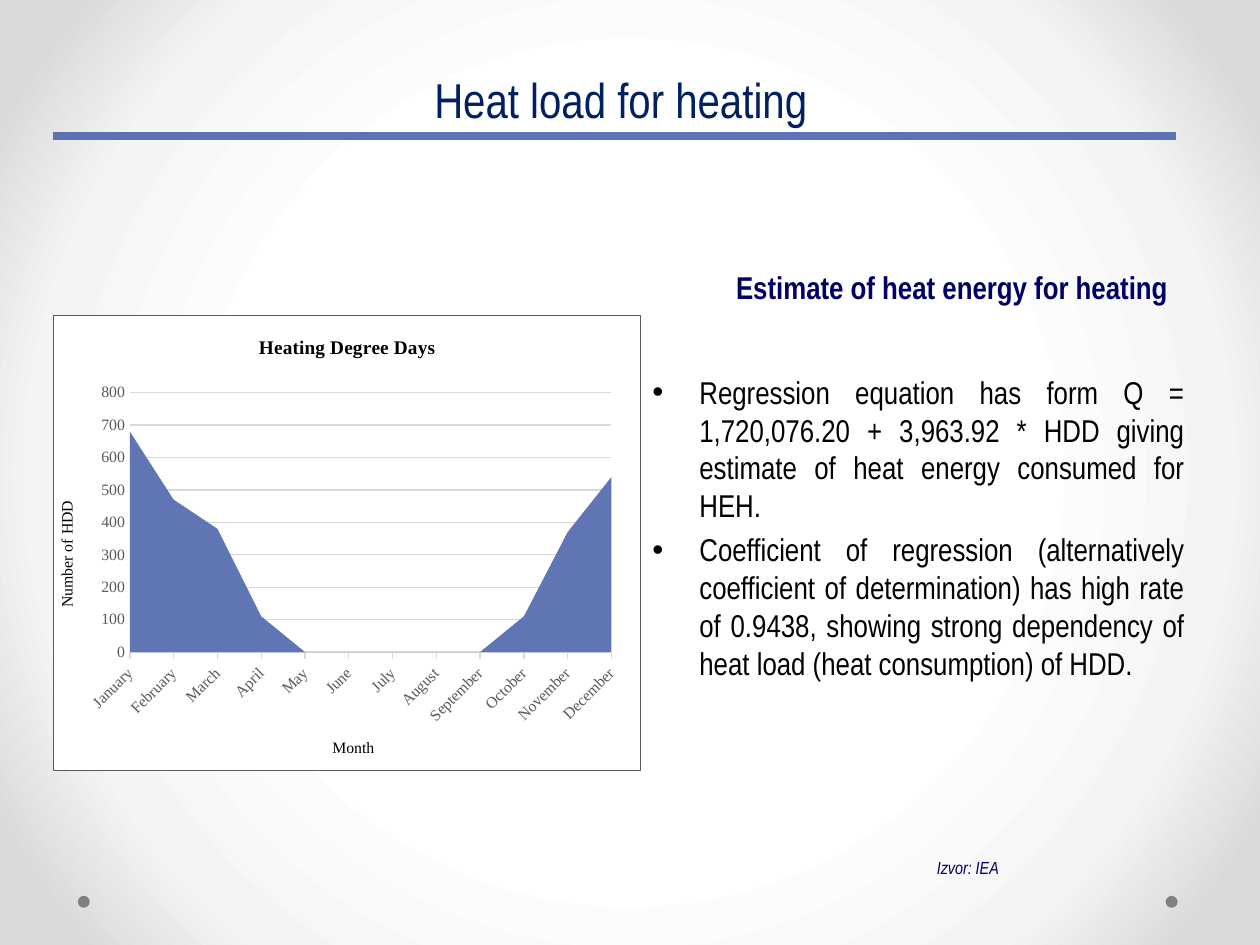
from lxml import etree
from pptx import Presentation, util as u
from pptx.chart.data import CategoryChartData
from pptx.dml.color import RGBColor
from pptx.enum import chart as ch, shapes, text
from pptx.oxml import parse_xml
from pptx.oxml.ns import nsdecls, qn

# Content
TITLE = "Heat load for heating"
HEADING = "Estimate of heat energy for heating "
SOURCE = "Izvor: IEA"
FINDINGS = [
    "Regression equation has form Q = 1,720,076.20 + 3,963.92 * HDD giving "
    "estimate of heat energy consumed for HEH. ",
    "Coefficient of regression (alternatively coefficient of determination) has "
    "high rate of 0.9438, showing strong dependency of heat load (heat "
    "consumption) of HDD. ",
]
DEGREE_DAYS = {
    "January": 680, "February": 470, "March": 380, "April": 110,
    "May": None, "June": None, "July": None, "August": None, "September": None,
    "October": 110, "November": 370, "December": 540,
}
CHART_TITLE, MONTH_TITLE, DAYS_TITLE = "Heating Degree Days", "Month", "Number of HDD"


class Theme:
    body_font, chart_font, chart_base = "Arial Narrow", "Times New Roman", "Cambria"
    title, accent, black, white = "002060", "000066", "000000", "FFFFFF"
    rule, area, dot = "5C72B2", "6076B4", "808080"
    label, grid = "595959", "D9D9D9"
    backdrop = [(0, "FFFFFF"), (50, "FFFFFF"), (76, "F4F4F4"), (92, "DADADA"), (100, "DADADA")]
    title_size, body_size, source_size = 28, 18, 10
    chart_title_size, chart_size, axis_size = 11, 10, 9


def style(font, name, size, color, bold=False, italic=False):
    font.name, font.size = name, u.Pt(size)
    font.bold, font.italic = bold, italic
    font.color.rgb = RGBColor.from_string(color)


def draw_line(line, color, width):
    line.color.rgb = RGBColor.from_string(color)
    line.width = u.Pt(width)


def add_text(slide, box, lines, size, color, align=text.PP_ALIGN.CENTER, wrap=True,
             gap=0.2, **emphasis):
    frame = slide.shapes.add_textbox(*map(u.Cm, box)).text_frame
    frame.text = "\n".join(lines)
    frame.word_wrap = wrap
    for paragraph in frame.paragraphs:
        paragraph.alignment = align
        paragraph.space_before = u.Pt(size * gap)
        style(paragraph.runs[0].font, Theme.body_font, size, color, **emphasis)
    return frame


def add_bullets(frame, indent):
    for paragraph in frame.paragraphs:
        props = paragraph._p.get_or_add_pPr()
        props.set("marL", str(indent))
        props.set("indent", str(-indent))
        etree.SubElement(props, qn("a:buFont"), typeface="Arial")
        etree.SubElement(props, qn("a:buChar"), char="•")


def paint_backdrop(slide):
    slide.background.fill.gradient()
    gradient = slide._element.find(".//" + qn("a:gradFill"))
    stops = "".join(
        f'<a:gs pos="{pos * 1000}"><a:srgbClr val="{color}"/></a:gs>'
        for pos, color in Theme.backdrop)
    gradient.getparent().replace(gradient, parse_xml(
        f'<a:gradFill {nsdecls("a")} rotWithShape="1"><a:gsLst>{stops}</a:gsLst>'
        '<a:path path="circle"><a:fillToRect l="50000" t="50000" r="50000" b="50000"/>'
        '</a:path></a:gradFill>'))


def set_chart_title(owner, wording, size, bold=False):
    frame = (owner.chart_title if hasattr(owner, "chart_title") else owner.axis_title).text_frame
    frame.text = wording
    style(frame.paragraphs[0].runs[0].font, Theme.chart_font, size, Theme.black, bold)


def add_degree_days(slide, box):
    data = CategoryChartData()
    data.categories = list(DEGREE_DAYS)
    data.add_series("Series 1", list(DEGREE_DAYS.values()))
    chart = slide.shapes.add_chart(
        ch.XL_CHART_TYPE.AREA_STACKED, *map(u.Cm, box), data).chart
    style(chart.font, Theme.chart_base, Theme.chart_size, Theme.black)
    chart.has_legend = False
    chart.plots[0].vary_by_categories = False
    fill = chart.plots[0].series[0].format.fill
    fill.solid()
    fill.fore_color.rgb = RGBColor.from_string(Theme.area)
    set_chart_title(chart, CHART_TITLE, Theme.chart_title_size, bold=True)

    # Axes
    months, days = chart.category_axis, chart.value_axis
    for axis, wording in ((months, MONTH_TITLE), (days, DAYS_TITLE)):
        set_chart_title(axis, wording, Theme.axis_size)
        style(axis.tick_labels.font, Theme.chart_font, Theme.axis_size, Theme.label)
        axis.minor_tick_mark = ch.XL_TICK_MARK.NONE
    months.has_major_gridlines = False
    months.major_tick_mark = ch.XL_TICK_MARK.OUTSIDE
    months._element.txPr.bodyPr.set("rot", str(-45 * 60000))
    draw_line(months.format.line, Theme.grid, 0.75)
    days.minimum_scale, days.maximum_scale, days.major_unit = 0, 800, 100
    days.major_tick_mark = ch.XL_TICK_MARK.NONE
    days.format.line.fill.background()
    days.has_major_gridlines = True
    draw_line(days.major_gridlines.format.line, Theme.grid, 0.75)
    days._element.find(qn("c:crossBetween")).set("val", "midCat")

    # Inner plot position and frame
    plot_area = chart._chartSpace.chart.plotArea
    for old in plot_area.findall(qn("c:layout")):
        plot_area.remove(old)
    places = "".join(f'<c:{key} val="{value}"/>' for key, value in (
        ("layoutTarget", "inner"), ("xMode", "edge"), ("yMode", "edge"),
        ("x", 0.13), ("y", 0.17), ("w", 0.82), ("h", 0.57)))
    plot_area.insert(0, parse_xml(
        f'<c:layout {nsdecls("c")}><c:manualLayout>{places}</c:manualLayout></c:layout>'))
    chart._chartSpace.chart.addnext(parse_xml(
        f'<c:spPr {nsdecls("c", "a")}>'
        f'<a:solidFill><a:srgbClr val="{Theme.white}"/></a:solidFill>'
        f'<a:ln w="{u.Pt(0.5)}"><a:solidFill><a:srgbClr val="{Theme.label}"/>'
        '</a:solidFill></a:ln></c:spPr>'))


def main():
    deck = Presentation()
    deck.slide_width, deck.slide_height = u.Cm(25.4), u.Cm(19.05)
    slide = deck.slides.add_slide(deck.slide_layouts[6])
    paint_backdrop(slide)

    # Corner dots
    for left in (23.5, 1.57):
        dot = slide.shapes.add_shape(
            shapes.MSO_SHAPE.OVAL, u.Cm(left), u.Cm(18.06), u.Cm(0.24), u.Cm(0.24))
        dot.shadow.inherit = False
        dot.fill.solid()
        dot.fill.fore_color.rgb = RGBColor.from_string(Theme.dot)
        dot.line.fill.background()

    # Title and rule
    title = add_text(slide, (0.89, 0, 23.24, 2.72), [TITLE],
                     Theme.title_size, Theme.title, gap=0)
    title.vertical_anchor = text.MSO_ANCHOR.BOTTOM
    rule = slide.shapes.add_connector(
        shapes.MSO_CONNECTOR.STRAIGHT, u.Cm(1.07), u.Cm(2.74), u.Cm(23.7), u.Cm(2.74))
    draw_line(rule.line, Theme.rule, 4.5)
    etree.SubElement(rule._element.spPr, qn("a:effectLst"))

    # Source, chart, heading and findings
    add_text(slide, (18.62, 17.15, 1.78, 0.69), [SOURCE],
             Theme.source_size, Theme.accent, wrap=False, italic=True)
    add_degree_days(slide, (1.07, 6.35, 11.86, 9.19))
    add_text(slide, (14.53, 5.28, 9.47, 1.02), [HEADING],
             Theme.body_size, Theme.accent, wrap=False, bold=True)
    findings = add_text(slide, (12.9, 7.39, 11.23, 9.19), FINDINGS,
                        Theme.body_size, Theme.black, text.PP_ALIGN.JUSTIFY)
    add_bullets(findings, u.Cm(0.95))

    deck.save("out.pptx")


if __name__ == "__main__":
    main()
